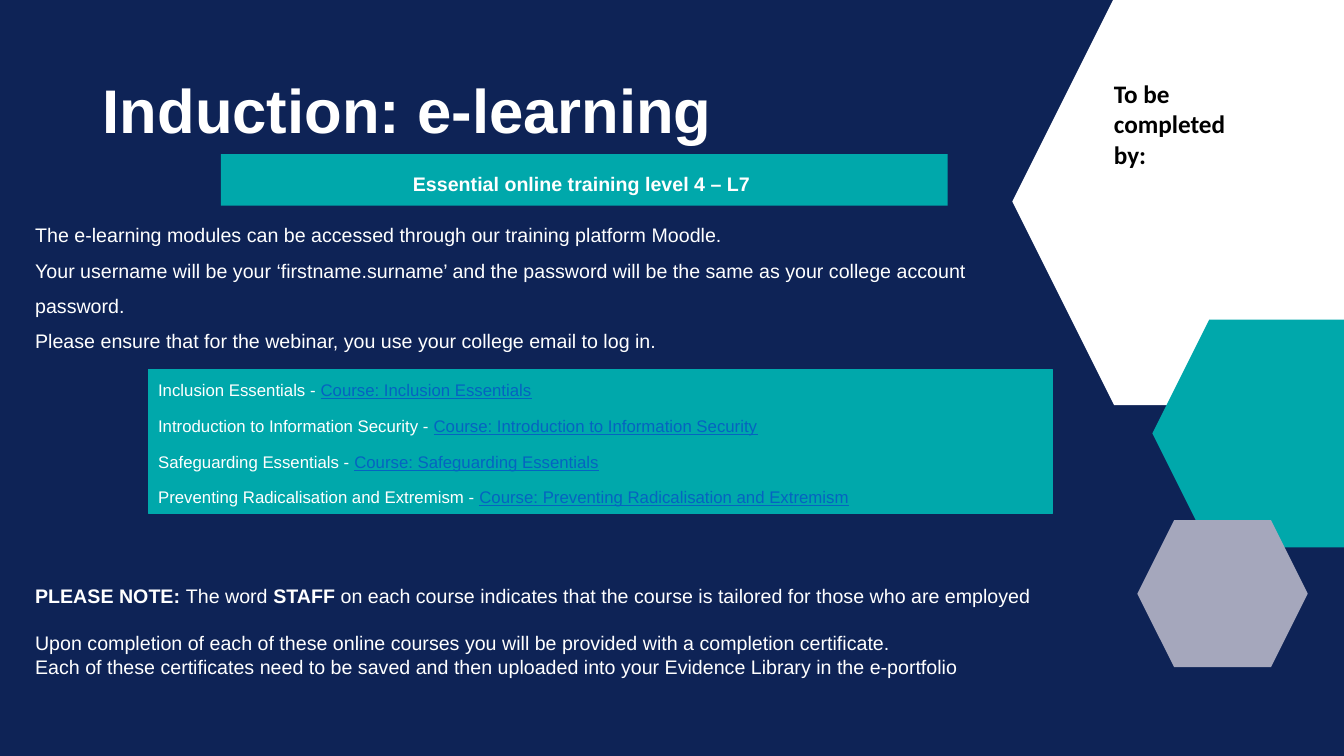
from pptx import Presentation
from pptx.dml.color import RGBColor
from pptx.enum import shapes, text
from pptx.util import Inches, Pt

COLOURS = {
    "navy": "0E2356",
    "teal": "00A8AB",
    "lilac": "A5A7BC",
    "white": "FFFFFF",
    "black": "000000",
    "link": "0563C1",
}


def add_filled_shape(kind, box, colour):
    shape = slide.shapes.add_shape(kind, *[Inches(length) for length in box])
    shape.shadow.inherit = False
    shape.fill.solid()
    shape.fill.fore_color.rgb = RGBColor.from_string(COLOURS[colour])
    shape.line.fill.background()
    shape.text_frame.word_wrap = True
    return shape


def write(frame, paragraphs, size, colour="white", font="Arial"):
    frame.word_wrap = True
    for index, runs in enumerate(paragraphs):
        paragraph = frame.paragraphs[0] if index == 0 else frame.add_paragraph()
        paragraph.alignment = text.PP_ALIGN.LEFT
        for words, style in runs:
            run = paragraph.add_run()
            run.text = words
            run.font.name = font
            run.font.size = Pt(size)
            run.font.bold = style == "bold"
            run.font.underline = style == "link"
            run_colour = "link" if style == "link" else colour
            run.font.color.rgb = RGBColor.from_string(COLOURS[run_colour])


presentation = Presentation()
presentation.slide_width = Inches(13.33)
presentation.slide_height = Inches(7.5)
slide = presentation.slides.add_slide(presentation.slide_layouts[5])
slide.background.fill.solid()
slide.background.fill.fore_color.rgb = RGBColor.from_string(COLOURS["navy"])

hexagons = [
    ((10.04, -0.02, 4.48, 4.04), "white"),
    ((11.43, 3.17, 2.54, 2.26), "teal"),
    ((11.28, 5.16, 1.69, 1.46), "lilac"),
]
for box, colour in hexagons:
    add_filled_shape(shapes.MSO_SHAPE.HEXAGON, box, colour)

title = slide.shapes.title
title.left, title.top = Inches(0.92), Inches(0.4)
title.width, title.height = Inches(11.5), Inches(1.45)
write(title.text_frame, [[("Induction: e-learning", "bold")]], 44)
title.text_frame.auto_size = text.MSO_AUTO_SIZE.NONE
title.text_frame.vertical_anchor = text.MSO_ANCHOR.MIDDLE
title.text_frame.paragraphs[0].line_spacing = 0.9

banner = add_filled_shape(shapes.MSO_SHAPE.RECTANGLE, (2.19, 1.53, 7.21, 0.51), "teal")
write(banner.text_frame, [[("Essential online training level 4 – L7", "bold")]], 14)
banner.text_frame.margin_top = Inches(0.13)
banner.text_frame.margin_right = Inches(0.15)
banner.text_frame.vertical_anchor = text.MSO_ANCHOR.MIDDLE
banner.text_frame.paragraphs[0].alignment = text.PP_ALIGN.CENTER

access = slide.shapes.add_textbox(Inches(0.25), Inches(2.05), Inches(9.79), Inches(1.47))
write(access.text_frame, [
    [("The e-learning modules can be accessed through our training platform Moodle.", "plain")],
    [("Your username will be your ‘firstname.surname’ and the password will be "
      "the same as your college account password.", "plain")],
    [("Please ensure that for the webinar, you use your college email to log in.", "plain")],
], 14)
for paragraph in access.text_frame.paragraphs:
    paragraph.line_spacing = 1.5

note = slide.shapes.add_textbox(Inches(0.25), Inches(5.74), Inches(10.34), Inches(1.04))
write(note.text_frame, [
    [("PLEASE NOTE: ", "bold"), ("The word ", "plain"), ("STAFF ", "bold"),
     ("on each course indicates that the course is tailored for those who are employed", "plain")],
    [("Upon completion of each of these online courses you will be provided "
      "with a completion certificate.", "plain")],
    [("Each of these certificates need to be saved and then uploaded into your "
      "Evidence Library in the e-portfolio", "plain")],
], 14)
note.text_frame.paragraphs[1].space_before = Pt(17)

courses = [
    "Inclusion Essentials",
    "Introduction to Information Security",
    "Safeguarding Essentials",
    "Preventing Radicalisation and Extremism",
]
course_list = add_filled_shape(shapes.MSO_SHAPE.RECTANGLE, (1.47, 3.67, 8.97, 1.42), "teal")
course_list.line.color.rgb = RGBColor.from_string(COLOURS["teal"])
course_list.line.width = Pt(0.75)
course_list.text_frame.vertical_anchor = text.MSO_ANCHOR.TOP
write(course_list.text_frame, [
    [(f"{course} - ", "plain"), (f"Course: {course}", "link")] for course in courses
], 12)
for paragraph in course_list.text_frame.paragraphs:
    paragraph.line_spacing = 1.25
    paragraph.space_after = Pt(7.5)

completed_by = slide.shapes.add_textbox(Inches(10.95), Inches(0.73), Inches(1.54), Inches(1.01))
write(completed_by.text_frame, [[("To be completed by:", "bold")]], 18, "black", "Calibri")

presentation.save("out.pptx")
